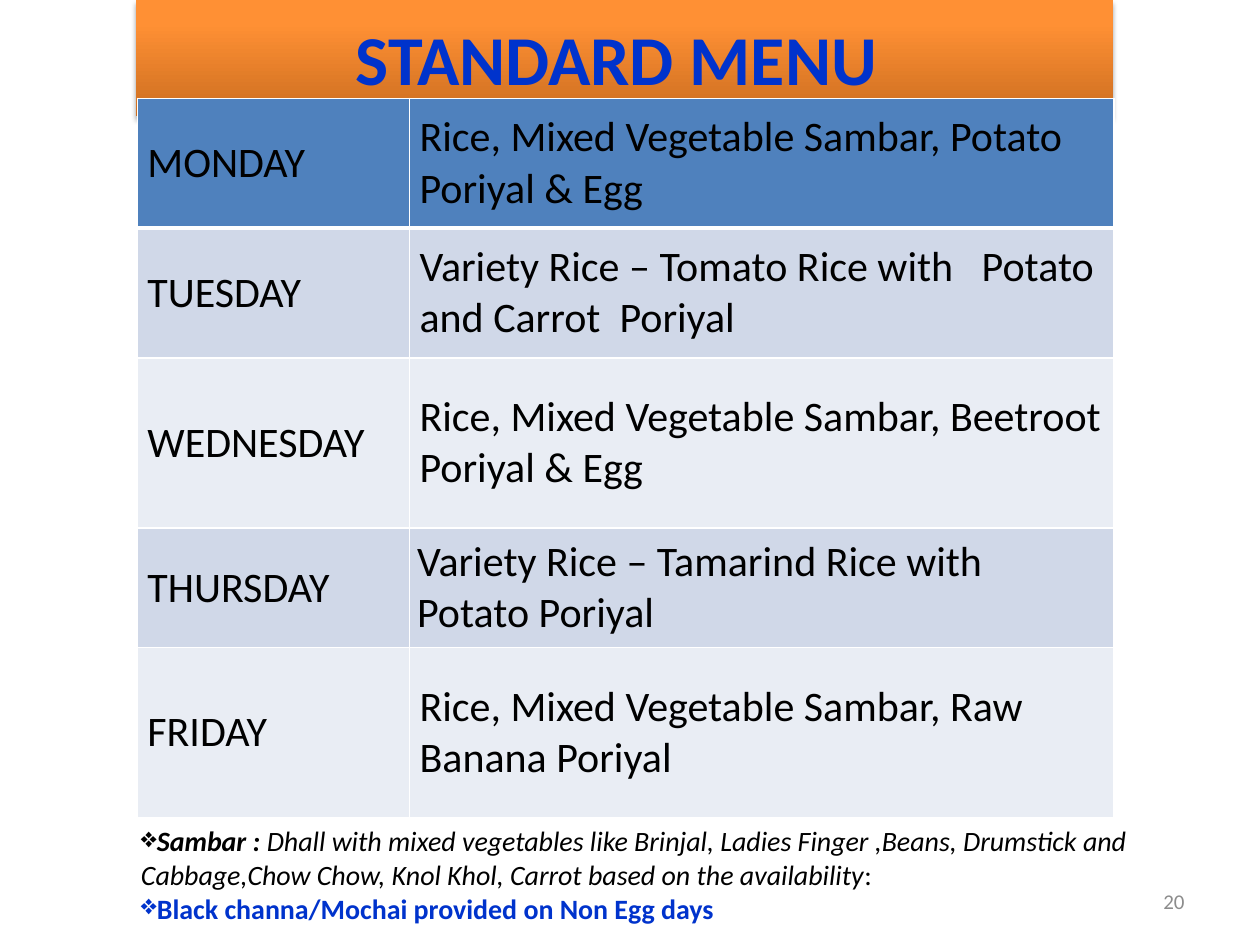
from dataclasses import dataclass
from typing import Any

from lxml.etree import SubElement
from pptx import Presentation
from pptx.dml.color import RGBColor
from pptx.enum.shapes import MSO_SHAPE
from pptx.enum.text import MSO_ANCHOR, PP_ALIGN
from pptx.oxml import parse_xml
from pptx.oxml.ns import nsdecls, qn
from pptx.util import Inches, Pt


@dataclass(frozen=True)
class Theme:
    font: str = "Calibri"
    ink: str = "000000"
    accent: str = "0033CC"
    muted: str = "8C8C8C"
    rule: str = "FFFFFF"
    header: str = "4F81BD"
    bands: tuple[str, str] = ("D0D8E8", "E9EDF4")
    banner: tuple[tuple[int, str], ...] = ((0, "CC6E20"), (80, "FF9034"), (100, "FF9136"))
    title_size: int = 40
    menu_size: int = 24
    note_size: int = 16
    number_size: int = 12


@dataclass(frozen=True)
class Box:
    left: float
    top: float
    width: float
    height: float

    def lengths(self) -> tuple[Any, ...]:
        return tuple(Inches(v) for v in (self.left, self.top, self.width, self.height))


@dataclass(frozen=True)
class DayMenu:
    day: str
    dishes: str
    height: float
    dish_inset: tuple[float, float] = (0.08, 0.04)


@dataclass(frozen=True)
class Phrase:
    text: str
    color: str
    bold: bool = False
    italic: bool = False


THEME = Theme()
DAY_INSET = (0.08, 0.04)
COLUMNS = (2.16, 5.59)
MENU = (
    DayMenu("MONDAY", "Rice, Mixed Vegetable Sambar, Potato Poriyal & Egg", 1.03),
    DayMenu("TUESDAY", "Variety Rice – Tomato Rice with   Potato and Carrot  Poriyal", 1.03),
    DayMenu("WEDNESDAY", "Rice, Mixed Vegetable Sambar, Beetroot Poriyal & Egg", 1.35),
    DayMenu("THURSDAY", "Variety Rice – Tamarind Rice with   Potato Poriyal", 0.95, (0.06, 0)),
    DayMenu("FRIDAY", "Rice, Mixed Vegetable Sambar, Raw Banana Poriyal", 1.35),
)
NOTES = (
    (
        Phrase("Sambar : ", THEME.ink, bold=True, italic=True),
        Phrase(
            "Dhall with mixed vegetables like Brinjal, Ladies Finger ,Beans, Drumstick "
            "and Cabbage,Chow Chow, Knol Khol, Carrot based on the availability",
            THEME.ink,
            italic=True,
        ),
        Phrase(":", THEME.ink),
    ),
    (Phrase("Black channa/Mochai provided on Non Egg days", THEME.accent, bold=True),),
)


def add_phrase(paragraph: Any, phrase: Phrase, size: int) -> None:
    run = paragraph.add_run()
    run.text = phrase.text
    formats = {
        "name": THEME.font,
        "size": Pt(size),
        "bold": phrase.bold,
        "italic": phrase.italic,
    }
    for attribute, value in formats.items():
        setattr(run.font, attribute, value)
    run.font.color.rgb = RGBColor.from_string(phrase.color)


def add_banner(slide: Any, box: Box) -> None:
    banner = slide.shapes.add_shape(MSO_SHAPE.RECTANGLE, *box.lengths())
    banner.line.fill.background()
    stops = "".join(
        f'<a:gs pos="{position * 1000}"><a:srgbClr val="{color}"/></a:gs>'
        for position, color in THEME.banner
    )
    gradient = parse_xml(
        f'<a:gradFill {nsdecls("a")} rotWithShape="1"><a:gsLst>{stops}</a:gsLst>'
        '<a:lin ang="16200000" scaled="0"/></a:gradFill>'
    )
    properties = banner._element.spPr
    properties.find(qn("a:prstGeom")).addnext(gradient)
    properties.append(parse_xml(
        f'<a:effectLst {nsdecls("a")}>'
        f'<a:outerShdw blurRad="{Pt(3.1)}" dist="{Pt(1.8)}" dir="5400000" rotWithShape="0">'
        '<a:srgbClr val="000000"><a:alpha val="35000"/></a:srgbClr>'
        '</a:outerShdw></a:effectLst>'
    ))
    frame = banner.text_frame
    frame.vertical_anchor = MSO_ANCHOR.MIDDLE
    heading = frame.paragraphs[0]
    heading.alignment = PP_ALIGN.CENTER
    add_phrase(heading, Phrase("STANDARD MENU ", THEME.accent, bold=True), THEME.title_size)


def add_borders(cell: Any, widths: dict[str, int]) -> None:
    properties = cell._tc.get_or_add_tcPr()
    for side, width in widths.items():
        border = SubElement(properties, qn(f"a:ln{side}"), w=str(Pt(width)))
        fill = SubElement(border, qn("a:solidFill"))
        SubElement(fill, qn("a:srgbClr"), val=THEME.rule)


def fill_cell(cell: Any, text: str, inset: tuple[float, float], row: int) -> None:
    add_borders(cell, {"L": 1, "R": 1, "T": 3 if row == 1 else 1, "B": 3 if row == 0 else 1})
    cell.fill.solid()
    color = THEME.bands[(row - 1) % 2] if row else THEME.header
    cell.fill.fore_color.rgb = RGBColor.from_string(color)
    across, down = inset
    formats = {
        "margin_left": Inches(across),
        "margin_right": Inches(across),
        "margin_top": Inches(down),
        "margin_bottom": Inches(down),
        "vertical_anchor": MSO_ANCHOR.MIDDLE,
    }
    for attribute, value in formats.items():
        setattr(cell, attribute, value)
    add_phrase(cell.text_frame.paragraphs[0], Phrase(text, THEME.ink), THEME.menu_size)


def add_menu(slide: Any, left: float, top: float) -> None:
    box = Box(left, top, sum(COLUMNS), sum(entry.height for entry in MENU))
    menu = slide.shapes.add_table(len(MENU), len(COLUMNS), *box.lengths()).table
    for column, width in zip(menu.columns, COLUMNS):
        column.width = Inches(width)
    for row, entry in enumerate(MENU):
        menu.rows[row].height = Inches(entry.height)
        fill_cell(menu.cell(row, 0), entry.day, DAY_INSET, row)
        fill_cell(menu.cell(row, 1), entry.dishes, entry.dish_inset, row)


def add_notes(slide: Any, box: Box) -> None:
    frame = slide.shapes.add_textbox(*box.lengths()).text_frame
    frame.word_wrap = True
    for index, phrases in enumerate(NOTES):
        note = frame.add_paragraph() if index else frame.paragraphs[0]
        properties = note._p.get_or_add_pPr()
        properties.set("marL", "0")
        properties.set("indent", "0")
        SubElement(properties, qn("a:buChar"), char="❖")
        for phrase in phrases:
            add_phrase(note, phrase, THEME.note_size)


def add_page_number(slide: Any, box: Box) -> None:
    frame = slide.shapes.add_textbox(*box.lengths()).text_frame
    frame.word_wrap = True
    frame.vertical_anchor = MSO_ANCHOR.MIDDLE
    number = frame.paragraphs[0]
    number.alignment = PP_ALIGN.RIGHT
    add_phrase(number, Phrase("20", THEME.muted), THEME.number_size)


def main() -> None:
    presentation = Presentation()
    presentation.slide_width = Inches(10)
    presentation.slide_height = Inches(7.5)
    slide = presentation.slides.add_slide(presentation.slide_layouts[6])
    add_banner(slide, Box(1.08, 0, 7.75, 0.92))
    add_menu(slide, 1.09, 0.78)
    add_page_number(slide, Box(7.17, 6.95, 2.33, 0.4))
    add_notes(slide, Box(1.02, 6.49, 8.05, 0.91))
    presentation.save("out.pptx")


if __name__ == "__main__":
    main()
